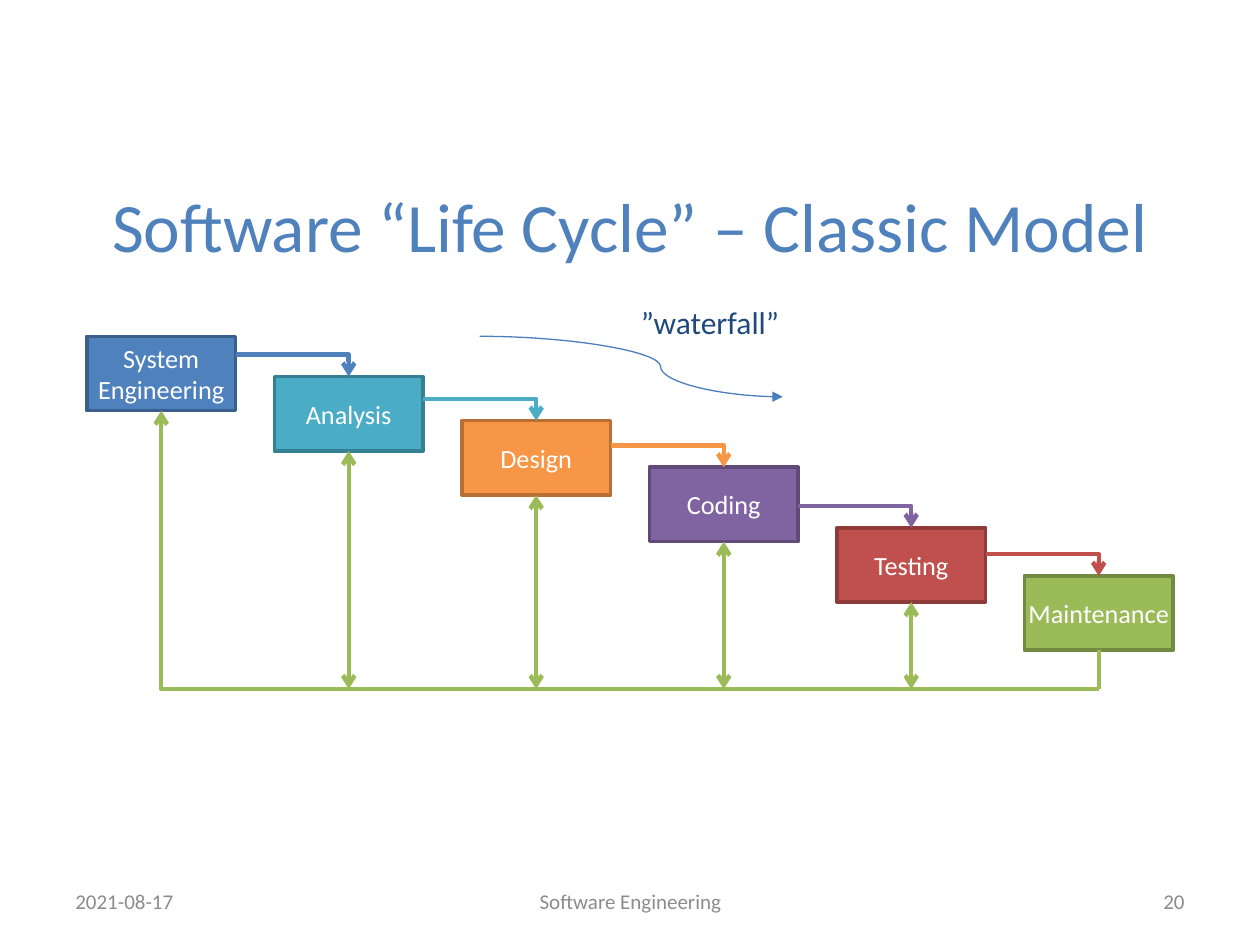
from itertools import pairwise

from lxml.etree import SubElement
from pptx import Presentation
from pptx.dml.color import RGBColor
from pptx.enum.shapes import MSO_CONNECTOR as Conn, MSO_SHAPE as Shape
from pptx.enum.text import MSO_ANCHOR as Anchor, PP_ALIGN as Align
from pptx.oxml.ns import qn
from pptx.util import Cm, Pt

BLUE = RGBColor(0x4F, 0x81, 0xBD)
BLUE_EDGE = RGBColor(0x3A, 0x5F, 0x8C)
TEAL = RGBColor(0x4B, 0xAC, 0xC6)
TEAL_EDGE = RGBColor(0x37, 0x7F, 0x92)
ORANGE = RGBColor(0xF7, 0x96, 0x46)
ORANGE_EDGE = RGBColor(0xB7, 0x6F, 0x34)
PURPLE = RGBColor(0x80, 0x64, 0xA2)
PURPLE_EDGE = RGBColor(0x5F, 0x4A, 0x78)
RED = RGBColor(0xC0, 0x50, 0x4D)
RED_EDGE = RGBColor(0x8E, 0x3B, 0x39)
GREEN = RGBColor(0x9B, 0xBB, 0x59)
GREEN_EDGE = RGBColor(0x73, 0x8A, 0x42)
CURVE = RGBColor(0x4B, 0x7E, 0xBC)
NAVY = RGBColor(0x1F, 0x49, 0x7D)
GREY = RGBColor(0x8C, 0x8C, 0x8C)
WHITE = RGBColor(0xFF, 0xFF, 0xFF)

BOX_W, BOX_H = 3, 1.5
LEFT, STEP = 1.75, 3.78
DROP = 0.44
TRUNK_Y = 13.89

PHASES = [
    ("System\nEngineering", 6.78, BLUE, BLUE_EDGE),
    ("Analysis", 7.59, TEAL, TEAL_EDGE),
    ("Design", 8.48, ORANGE, ORANGE_EDGE),
    ("Coding", 9.42, PURPLE, PURPLE_EDGE),
    ("Testing", 10.64, RED, RED_EDGE),
    ("Maintenance", 11.61, GREEN, GREEN_EDGE),
]


class Deck:
    font = "Calibri"

    def __init__(self):
        self.prs = Presentation()
        self.prs.slide_width, self.prs.slide_height = Cm(25.4), Cm(19.05)
        self.s = self.prs.slides.add_slide(self.prs.slide_layouts[5])

    def set_text(self, tf, text, size, color, align, anchor=Anchor.MIDDLE, wrap=True):
        tf.text = text
        tf.word_wrap = wrap
        tf.vertical_anchor = anchor
        for p in tf.paragraphs:
            p.alignment = align
            p.font.name = self.font
            p.font.size = Pt(size)
            p.font.color.rgb = color

    def title(self, text, x, y, w, h):
        sp = self.s.shapes.title
        sp.left, sp.top, sp.width, sp.height = Cm(x), Cm(y), Cm(w), Cm(h)
        self.set_text(sp.text_frame, text, 39.6, BLUE, Align.CENTER)

    def label(self, text, x, y, w, h, size, color, align=Align.LEFT, **style):
        sp = self.s.shapes.add_textbox(Cm(x), Cm(y), Cm(w), Cm(h))
        self.set_text(sp.text_frame, text, size, color, align, **style)

    def box(self, text, x, y, fill, edge):
        sp = self.s.shapes.add_shape(Shape.RECTANGLE, Cm(x), Cm(y), Cm(BOX_W), Cm(BOX_H))
        sp.shadow.inherit = False
        sp.fill.solid()
        sp.fill.fore_color.rgb = fill
        sp.line.color.rgb = edge
        sp.line.width = Pt(2)
        self.set_text(sp.text_frame, text, 15, WHITE, Align.CENTER, wrap=False)

    def line(self, start, end, color, width=2.5, head=None, tail=None, kind=Conn.STRAIGHT):
        c = self.s.shapes.add_connector(kind, *map(Cm, start + end))
        c.line.color.rgb = color
        c.line.width = Pt(width)
        spPr = c._element.spPr
        ln = spPr.find(qn("a:ln"))
        for tag, arrow in (("a:headEnd", head), ("a:tailEnd", tail)):
            if arrow:
                SubElement(ln, qn(tag), type=arrow)
        SubElement(spPr, qn("a:effectLst"))
        return spPr

    def elbow(self, start, end, color):
        spPr = self.line(start, end, color, tail="arrow", kind=Conn.ELBOW)
        spPr.find(qn("a:prstGeom")).set("prst", "bentConnector2")
        xfrm = spPr.find(qn("a:xfrm"))
        if xfrm.attrib.pop("flipH", None) and xfrm.attrib.pop("flipV", None):
            xfrm.set("rot", "10800000")

    def curve(self, start, end, color, bend):
        spPr = self.line(start, end, color, 0.75, tail="triangle", kind=Conn.CURVE)
        guides = spPr.find(qn("a:prstGeom")).get_or_add_avLst()
        SubElement(guides, qn("a:gd"), name="adj1", fmla=f"val {bend}")


def main():
    deck = Deck()
    deck.title("Software “Life Cycle” – Classic Model", 1.75, 3.15, 21.9, 2.77)
    for text, x, w, align in (
        ("2021-08-17", 1.27, 5.92, Align.LEFT),
        ("20", 18.21, 5.92, Align.RIGHT),
        ("Software Engineering", 8.69, 8.04, Align.CENTER),
    ):
        deck.label(text, x, 17.65, w, 1.02, 12, GREY, align)

    lefts = [LEFT + i * STEP for i in range(len(PHASES))]
    centers = [x + BOX_W / 2 for x in lefts]
    tops = [top for _, top, _, _ in PHASES]
    for x, (name, top, fill, edge) in zip(lefts, PHASES):
        deck.box(name, x, top, fill, edge)

    for i, (_, next_top) in enumerate(pairwise(tops)):
        start = (lefts[i] + BOX_W, next_top - DROP)
        deck.elbow(start, (centers[i + 1], next_top), PHASES[i][2])

    corner = (centers[-1], TRUNK_Y)
    deck.elbow(corner, (centers[0], tops[0] + BOX_H), GREEN)
    deck.line(corner, (centers[-1], tops[-1] + BOX_H), GREEN)
    for x, top in zip(centers[1:-1], tops[1:-1]):
        deck.line((x, top + BOX_H), (x, TRUNK_Y), GREEN, head="arrow", tail="arrow")

    deck.label("”waterfall”", 12.67, 5.99, 3.33, 1.02, 18, NAVY,
               anchor=Anchor.TOP, wrap=False)
    deck.curve((9.67, 6.78), (15.78, 8), CURVE, 59700)
    deck.prs.save("out.pptx")


if __name__ == "__main__":
    main()
